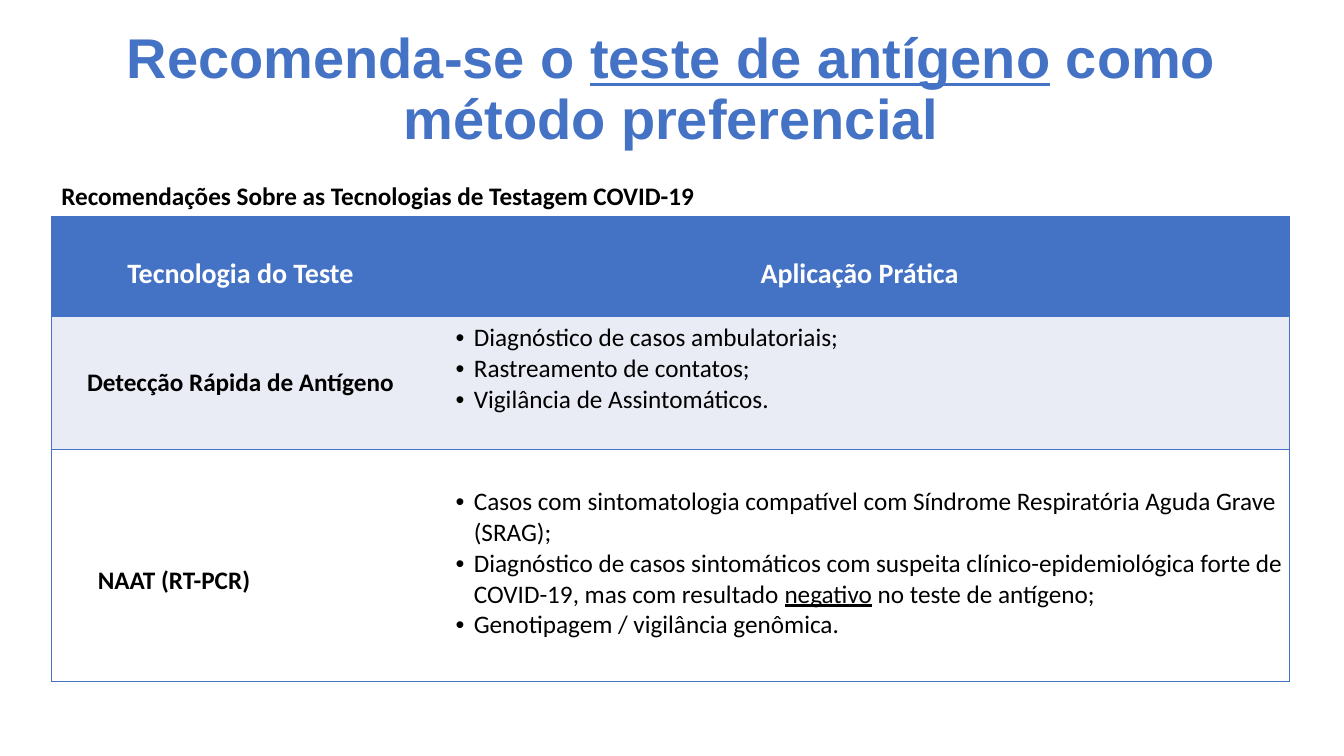
from lxml import etree
from pptx import Presentation
from pptx.dml.color import RGBColor
from pptx.enum.text import MSO_ANCHOR as Anchor, PP_ALIGN as Align
from pptx.oxml.ns import qn
from pptx.util import Inches, Pt

BLUE = RGBColor(0x44, 0x72, 0xC4)
PALE = RGBColor(0xE9, 0xEB, 0xF5)
WHITE = RGBColor(0xFF, 0xFF, 0xFF)
BLACK = RGBColor(0, 0, 0)

# Content: a paragraph is a list of spans; a span in a tuple is underlined
TITLE = [["Recomenda-se o ", ("teste de antígeno",), " como método preferencial"]]
CAPTION = [["Recomendações Sobre as Tecnologias de Testagem COVID-19"]]
HEADERS = [[["Tecnologia do Teste"]], [["Aplicação Prática"]]]
ANTIGEN = [["Detecção Rápida de Antígeno"]]
ANTIGEN_USES = [
    ["Diagnóstico de casos ambulatoriais;"],
    ["Rastreamento de contatos;"],
    ["Vigilância de Assintomáticos."],
]
NAAT = [["NAAT (RT-PCR)"]]
NAAT_USES = [
    ["Casos com sintomatologia compatível com Síndrome Respiratória Aguda Grave (SRAG);"],
    ["Diagnóstico de casos sintomáticos com suspeita clínico-epidemiológica forte de "
     "COVID-19, mas com resultado ", ("negativo",), " no teste de antígeno;"],
    ["Genotipagem / vigilância genômica."],
]

# Layout
LEFT, WIDTH = 0.51, 12.29
TABLE_TOP = 2.15
COLUMNS = [3.75, 8.53]
ROWS = [0.99, 1.32, 2.3]
ROW_FILLS = [BLUE, PALE, WHITE]
PADDING = 0.06
HEADER_TOP, NAAT_TOP, NAAT_LEFT = 0.4, 0.37, 0.46


def write(frame, paragraphs, size=18, color=BLACK, bold=False, font="Calibri",
          align=Align.LEFT, spacing=None, bullets=False):
    for index, spans in enumerate(paragraphs):
        para = frame.paragraphs[0] if index == 0 else frame.add_paragraph()
        para.alignment = align
        if spacing:
            para.line_spacing = spacing
        if bullets:
            props = para._p.get_or_add_pPr()
            props.set("marL", str(Inches(0.38)))
            props.set("indent", str(Inches(-0.18)))
            etree.SubElement(props, qn("a:buFont")).set("typeface", "Arial")
            etree.SubElement(props, qn("a:buChar")).set("char", "•")
        for text in spans:
            span = para.add_run()
            span.text = text[0] if isinstance(text, tuple) else text
            span.font.underline = isinstance(text, tuple)
            span.font.name, span.font.size = font, Pt(size)
            span.font.bold, span.font.color.rgb = bold, color


def set_borders(cell, visible):
    props = cell._tc.get_or_add_tcPr()
    for index, side in enumerate("LRTB"):
        line = etree.Element(qn("a:ln" + side), w=str(Pt(1)))
        if side in visible:
            fill = etree.SubElement(line, qn("a:solidFill"))
            etree.SubElement(fill, qn("a:srgbClr")).set("val", str(BLUE))
        else:
            etree.SubElement(line, qn("a:noFill"))
        props.insert(index, line)


deck = Presentation()
deck.slide_width, deck.slide_height = Inches(13.33), Inches(7.5)
page = deck.slides.add_slide(deck.slide_layouts[5])

# Title
title = page.shapes.title
title.left, title.top = Inches(LEFT), Inches(0.27)
title.width, title.height = Inches(WIDTH), Inches(1.26)
title.text_frame.vertical_anchor = Anchor.MIDDLE
write(title.text_frame, TITLE, size=40, color=BLUE, bold=True, font="Arial",
      align=Align.CENTER, spacing=0.9)

# Table frame
table = page.shapes.add_table(len(ROWS), len(COLUMNS), Inches(LEFT), Inches(TABLE_TOP),
                              Inches(WIDTH), Inches(sum(ROWS))).table
table.horz_banding = False
for column, width in zip(table.columns, COLUMNS):
    column.width = Inches(width)
for row, height, fill in zip(table.rows, ROWS, ROW_FILLS):
    row.height = Inches(height)
    for cell, sides in zip(row.cells, ("LTB", "RTB")):
        cell.margin_left = cell.margin_right = Inches(PADDING)
        cell.margin_top = cell.margin_bottom = Inches(PADDING)
        cell.fill.solid()
        cell.fill.fore_color.rgb = fill
        set_borders(cell, sides)

# Table text
for column, header in enumerate(HEADERS):
    cell = table.cell(0, column)
    cell.margin_top = Inches(HEADER_TOP)
    write(cell.text_frame, header, size=20, color=WHITE, bold=True, align=Align.CENTER)

antigen, naat = table.cell(1, 0), table.cell(2, 0)
antigen.vertical_anchor = naat.vertical_anchor = Anchor.MIDDLE
write(antigen.text_frame, ANTIGEN, bold=True, align=Align.CENTER)
naat.margin_left, naat.margin_top = Inches(NAAT_LEFT), Inches(NAAT_TOP)
write(naat.text_frame, NAAT, bold=True)

write(table.cell(1, 1).text_frame, ANTIGEN_USES, bullets=True)
naat_uses = table.cell(2, 1)
naat_uses.margin_top = Inches(NAAT_TOP)
write(naat_uses.text_frame, NAAT_USES, bullets=True)

# Caption above the table
caption = page.shapes.add_textbox(Inches(LEFT), Inches(1.74), Inches(6.67), Inches(0.4))
caption.text_frame.word_wrap = True
write(caption.text_frame, CAPTION, bold=True)

deck.save("out.pptx")
